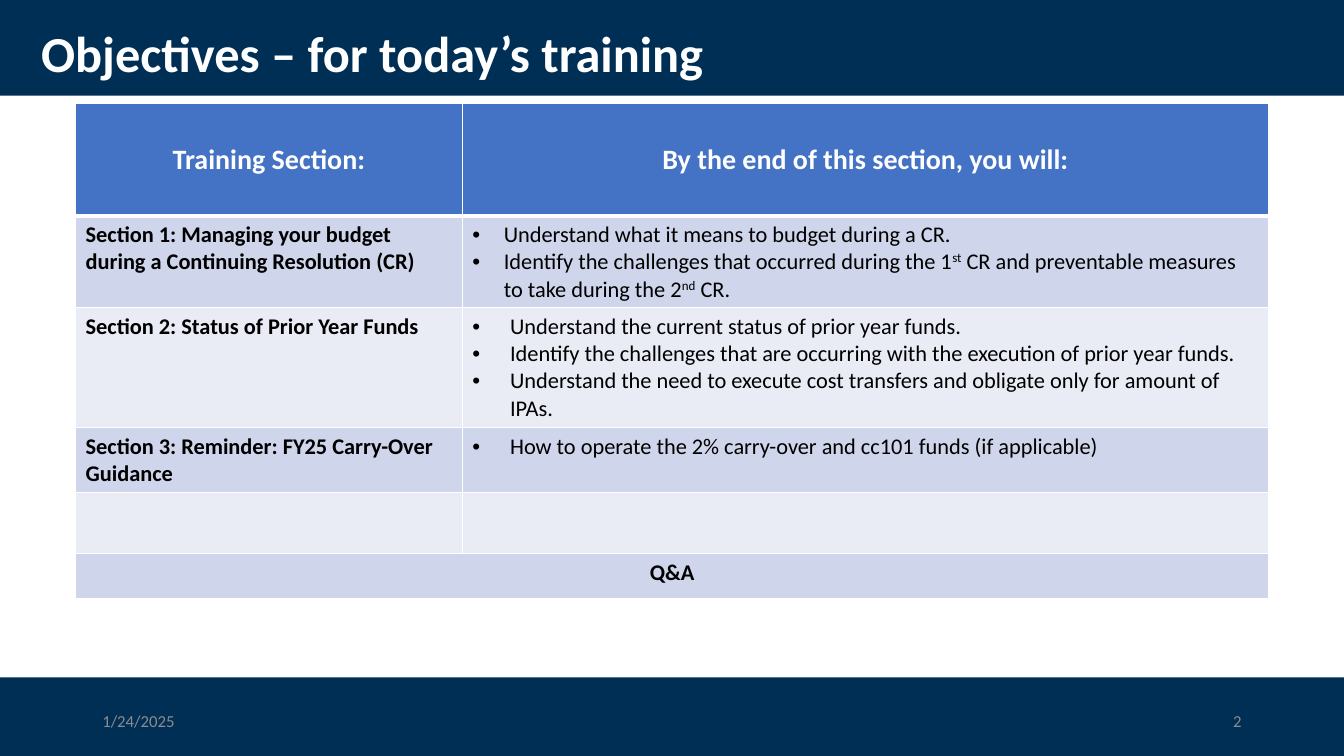
"""Build the training objectives slide with its section table."""
from lxml import etree
from pptx import Presentation
from pptx import util as u
from pptx.dml.color import RGBColor
from pptx.enum import shapes, text
from pptx.oxml.ns import qn

TITLE = "Objectives – for today’s training"
DATE, NUMBER = "1/24/2025", "2"
HEADINGS = ("Training Section:", "By the end of this section, you will:")
SECTIONS = [
    {"name": "Section 1: Managing your budget during a Continuing Resolution (CR)",
     "indent": 22.5, "height": 65.7,
     "goals": ["Understand what it means to budget during a CR.",
               ("Identify the challenges that occurred during the 1", "st",
                " CR and preventable measures to take during the 2", "nd", " CR.")]},
    {"name": "Section 2: Status of Prior Year Funds",
     "indent": 27, "height": 85.7,
     "goals": ["Understand the current status of prior year funds.",
               "Identify the challenges that are occurring with the execution of prior year funds.",
               "Understand the need to execute cost transfers and obligate only for amount of IPAs."]},
    {"name": "Section 3: Reminder: FY25 Carry-Over Guidance",
     "indent": 27, "height": 46.4,
     "goals": ["How to operate the 2% carry-over and cc101 funds (if applicable)"]},
    {"name": "", "indent": 0, "height": 43.6, "goals": []},
    {"name": "Q&A", "indent": 0, "height": 32.2, "goals": []},
]
THEME = {"font": "Calibri", "navy": "002F56", "white": "FFFFFF", "black": "000000",
         "header": "4472C4", "rows": ("CFD5EA", "E9EBF5"), "muted": "8C8C8C",
         "title_size": 36, "header_size": 20, "body_size": 16, "footer_size": 12}
SLIDE_WIDTH, SLIDE_HEIGHT = 960, 540
BANDS = ((0, 68.4), (483.84, SLIDE_HEIGHT - 483.84))
TABLE_LEFT, TABLE_TOP, COLUMNS, HEADER_HEIGHT = 54, 74.2, (276.2, 576), 80


def style(paragraph, size, color, bold=False, align=text.PP_ALIGN.LEFT):
    paragraph.alignment = align
    for run in paragraph.runs:
        run.font.name, run.font.size, run.font.bold = THEME["font"], u.Pt(size), bold
        run.font.color.rgb = RGBColor.from_string(color)


def add_band(slide, top, height):
    band = slide.shapes.add_shape(shapes.MSO_SHAPE.RECTANGLE, 0, u.Pt(top),
                                  u.Pt(SLIDE_WIDTH), u.Pt(height))
    band.shadow.inherit = False
    band.fill.solid()
    band.fill.fore_color.rgb = RGBColor.from_string(THEME["navy"])
    band.line.fill.background()


def add_label(slide, box, words, size, color, bold=False, align=text.PP_ALIGN.LEFT):
    frame = slide.shapes.add_textbox(*map(u.Pt, box)).text_frame
    frame.word_wrap = True
    frame.vertical_anchor = text.MSO_ANCHOR.MIDDLE
    frame.text = words
    style(frame.paragraphs[0], size, color, bold, align)


def paint_cell(cell, color, bottom=1):
    properties = cell._tc.get_or_add_tcPr()
    for side, width in (("L", 1), ("R", 1), ("T", 1), ("B", bottom)):
        line = etree.SubElement(properties, qn(f"a:ln{side}"), w=str(u.Pt(width)))
        fill = etree.SubElement(line, qn("a:solidFill"))
        etree.SubElement(fill, qn("a:srgbClr"), val=THEME["white"])
    cell.fill.solid()
    cell.fill.fore_color.rgb = RGBColor.from_string(color)


def write_goals(cell, goals, indent):
    frame = cell.text_frame
    for index, goal in enumerate(goals):
        paragraph = frame.add_paragraph() if index else frame.paragraphs[0]
        properties = paragraph._p.get_or_add_pPr()
        properties.set("marL", str(u.Pt(indent)))
        properties.set("indent", str(-u.Pt(indent)))
        etree.SubElement(properties, qn("a:buFont"), typeface="Arial")
        etree.SubElement(properties, qn("a:buChar"), char="•")
        pieces = (goal,) if isinstance(goal, str) else goal
        for place, piece in enumerate(pieces):
            run = paragraph.add_run()
            run.text = piece
            if place % 2:
                run._r.get_or_add_rPr().set("baseline", "30000")
        style(paragraph, THEME["body_size"], THEME["black"])


def add_objectives(slide):
    heights = [HEADER_HEIGHT] + [section["height"] for section in SECTIONS]
    table = slide.shapes.add_table(len(heights), len(COLUMNS), u.Pt(TABLE_LEFT), u.Pt(TABLE_TOP),
                                   u.Pt(sum(COLUMNS)), u.Pt(sum(heights))).table
    for column, width in zip(table.columns, COLUMNS):
        column.width = u.Pt(width)
    for row, height in zip(table.rows, heights):
        row.height = u.Pt(height)
    for cell, heading in zip(table.rows[0].cells, HEADINGS):
        paint_cell(cell, THEME["header"], bottom=3)
        cell.vertical_anchor = text.MSO_ANCHOR.MIDDLE
        cell.text_frame.text = heading
        style(cell.text_frame.paragraphs[0], THEME["header_size"], THEME["white"], True,
              text.PP_ALIGN.CENTER)
    for index, section in enumerate(SECTIONS):
        name_cell, goals_cell = table.rows[index + 1].cells
        for cell in (name_cell, goals_cell):
            paint_cell(cell, THEME["rows"][index % 2])
        name_cell.text_frame.text = section["name"]
        style(name_cell.text_frame.paragraphs[0], THEME["body_size"], THEME["black"], True)
        write_goals(goals_cell, section["goals"], section["indent"])
    closing, last = table.rows[len(SECTIONS)].cells
    closing.merge(last)
    closing.text_frame.paragraphs[0].alignment = text.PP_ALIGN.CENTER


def main():
    presentation = Presentation()
    presentation.slide_width, presentation.slide_height = u.Pt(SLIDE_WIDTH), u.Pt(SLIDE_HEIGHT)
    slide = presentation.slides.add_slide(presentation.slide_layouts[6])
    for top, height in BANDS:
        add_band(slide, top, height)
    add_label(slide, (22.3, 13, 828, 49), TITLE, THEME["title_size"], THEME["white"], True)
    add_objectives(slide)
    footer = THEME["footer_size"], THEME["muted"]
    add_label(slide, (678, 500.4, 216, 28.8), NUMBER, *footer, align=text.PP_ALIGN.RIGHT)
    add_label(slide, (66, 500.4, 216, 28.8), DATE, *footer)
    presentation.save("out.pptx")


if __name__ == "__main__":
    main()
